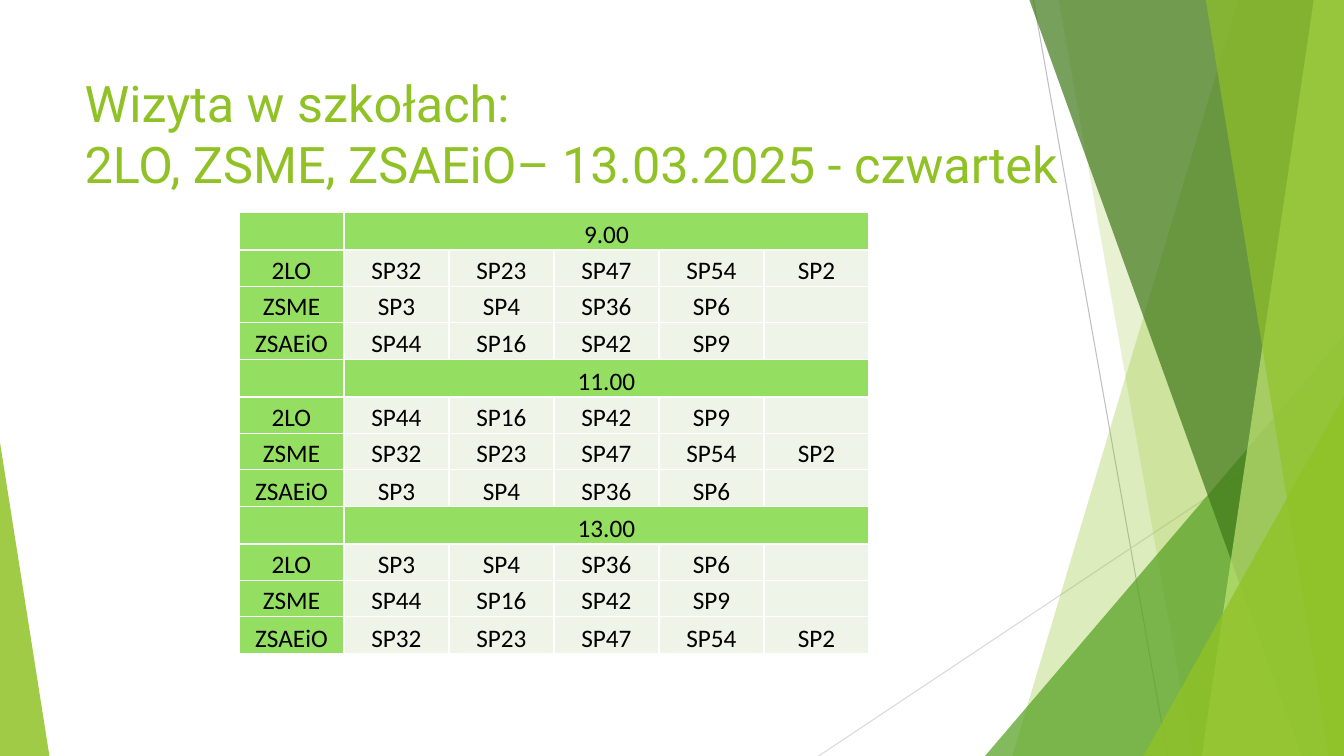
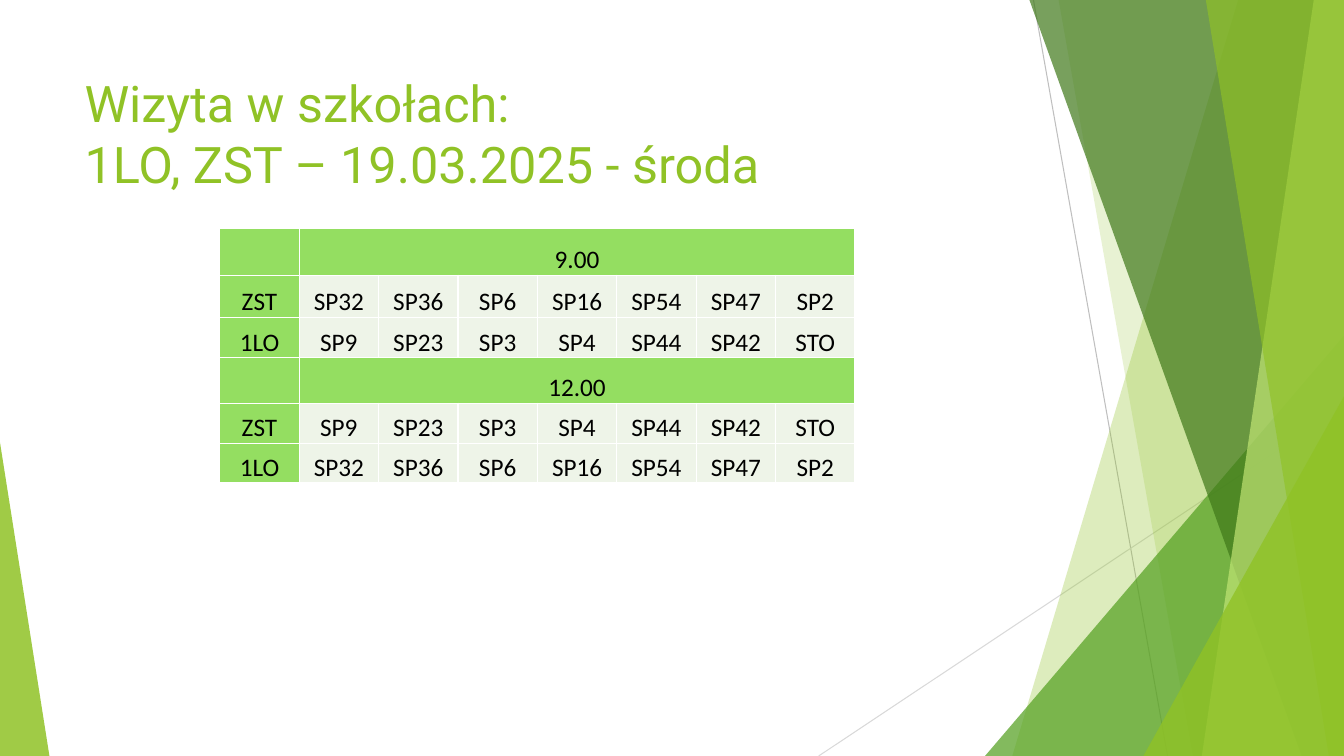
"""Build two slides with the timetables of school visits."""
from lxml.etree import SubElement
from pptx import Presentation
from pptx.dml.color import RGBColor
from pptx.enum.shapes import MSO_CONNECTOR, MSO_SHAPE
from pptx.enum.text import MSO_ANCHOR, PP_ALIGN
from pptx.oxml.ns import qn
from pptx.util import Inches, Pt

WIDTH, HEIGHT = 13.33, 7.5
GREEN, WHITE, BLACK = "90C226", "FFFFFF", "000000"
HEADER, BODY = "94DE61", "EEF4E8"
LINES = [(10.25, 0, 11.58, HEIGHT, "BFBFBF"), (WIDTH, 4.03, 8.12, HEIGHT, "D9D9D9")]
BANDS = [
    ("band", (12.28, 10.04), GREEN, 30),
    ("band", (10.5, 11.83), GREEN, 20),
    ("triangle", (9.77, 3.33, 3.56, 1), "54A021", 72),
    ("band", (10.21, 12.91), "3F7819", 70),
    ("band", (13.03, 11.92), "C0E474", 70),
    ("band", (11.96, 13.18), GREEN, 65),
    ("triangle", (11.34, 3.93, 1.99, 1), GREEN, 80),
    ("triangle", (0, 4.39, 0.49, 0), GREEN, 85),
]
A = ["SP32", "SP23", "SP47", "SP54", "SP2"]
B = ["SP3", "SP4", "SP36", "SP6", ""]
C = ["SP44", "SP16", "SP42", "SP9", ""]
D = ["SP32", "SP36", "SP6", "SP16", "SP54", "SP47", "SP2"]
E = ["SP9", "SP23", "SP3", "SP4", "SP44", "SP42", "STO"]
SLIDES = [
    {
        "title": "Wizyta w szkołach:\v2LO, ZSME, ZSAEiO– 13.03.2025 - czwartek",
        "title_width": 10.01,
        "at": (2.37, 2.11, 6.25),
        "schools": ["2LO", "ZSME", "ZSAEiO"],
        "visits": [("9.00", [A, B, C]), ("11.00", [C, A, B]), ("13.00", [B, C, A])],
        "heights": [0.37, 0.36, 0.36, 0.37] * 3,
    },
    {
        "title": "Wizyta w szkołach:\v1LO, ZST – 19.03.2025 - środa",
        "title_width": 9.4,
        "at": (2.18, 2.27, 6.3),
        "schools": ["ZST", "1LO"],
        "visits": [("9.00", [D, E]), ("12.00", [E, D])],
        "heights": [0.46, 0.42, 0.4, 0.45, 0.4, 0.39],
    },
]


def paint(fill, color, alpha=100):
    fill.solid()
    fill.fore_color.rgb = RGBColor.from_string(color)
    if alpha < 100:
        srgb = fill._xPr.find(qn("a:solidFill"))[0]
        SubElement(srgb, qn("a:alpha"), val=str(alpha * 1000))


def style(p, font, size, color):
    p.font.name = font
    p.font.size = Pt(size)
    paint(p.font.fill, color)


prs = Presentation()
prs.slide_width, prs.slide_height = Inches(WIDTH), Inches(HEIGHT)

for data in SLIDES:
    s = prs.slides.add_slide(prs.slide_layouts[6])
    paint(s.background.fill, WHITE)

    for x1, y1, x2, y2, color in LINES:
        line = s.shapes.add_connector(
            MSO_CONNECTOR.STRAIGHT, Inches(x1), Inches(y1), Inches(x2), Inches(y2))
        paint(line.line.fill, color)
        line.line.width = Pt(0.75)
        SubElement(line._element.spPr, qn("a:effectLst"))

    for kind, place, color, alpha in BANDS:
        if kind == "band":
            top_x, bottom_x = place
            corners = [(WIDTH, 0), (WIDTH, HEIGHT), (bottom_x, HEIGHT)]
            builder = s.shapes.build_freeform(Inches(top_x), 0)
            builder.add_line_segments([(Inches(x), Inches(y)) for x, y in corners])
            sp = builder.convert_to_shape()
        else:
            x, y, width, apex = place
            sp = s.shapes.add_shape(MSO_SHAPE.ISOSCELES_TRIANGLE, Inches(x), Inches(y),
                                    Inches(width), Inches(HEIGHT - y))
            sp.adjustments[0] = apex
        paint(sp.fill, color, alpha)
        sp.line.fill.background()
        sp.shadow.inherit = False

    title = s.shapes.add_textbox(
        Inches(0.74), Inches(0.67), Inches(data["title_width"]), Inches(1.44))
    tf = title.text_frame
    tf.word_wrap = True
    tf.text = data["title"]
    style(tf.paragraphs[0], "Roboto", 36, GREEN)

    rows = []
    for hour, groups in data["visits"]:
        rows.append(["", hour] + [""] * (len(groups[0]) - 1))
        rows += [[school] + group for school, group in zip(data["schools"], groups)]
    x, y, width = data["at"]
    columns = len(rows[0])
    table = s.shapes.add_table(len(rows), columns, Inches(x), Inches(y), Inches(width),
                               Inches(sum(data["heights"]))).table
    table.first_row = table.horz_banding = False
    for column in table.columns:
        column.width = Inches(width / columns)
    for i, (row, height) in enumerate(zip(rows, data["heights"])):
        table.rows[i].height = Inches(height)
        is_hour = i % (len(data["schools"]) + 1) == 0
        for j, text in enumerate(row):
            cell = table.cell(i, j)
            cell.text = text
            cell.vertical_anchor = MSO_ANCHOR.BOTTOM
            cell.margin_left = cell.margin_right = cell.margin_top = Inches(0.01)
            cell.margin_bottom = 0
            p = cell.text_frame.paragraphs[0]
            p.alignment = PP_ALIGN.CENTER
            style(p, "Calibri", 18, BLACK)
            tc_pr = cell._tc.get_or_add_tcPr()
            for side in ("lnL", "lnR", "lnT", "lnB"):
                ln = SubElement(tc_pr, qn("a:" + side), w=str(Pt(1)))
                SubElement(SubElement(ln, qn("a:solidFill")), qn("a:srgbClr"), val=WHITE)
            paint(cell.fill, HEADER if is_hour or j == 0 else BODY)
        if is_hour:
            table.cell(i, 1).merge(table.cell(i, columns - 1))

prs.save("out.pptx")
